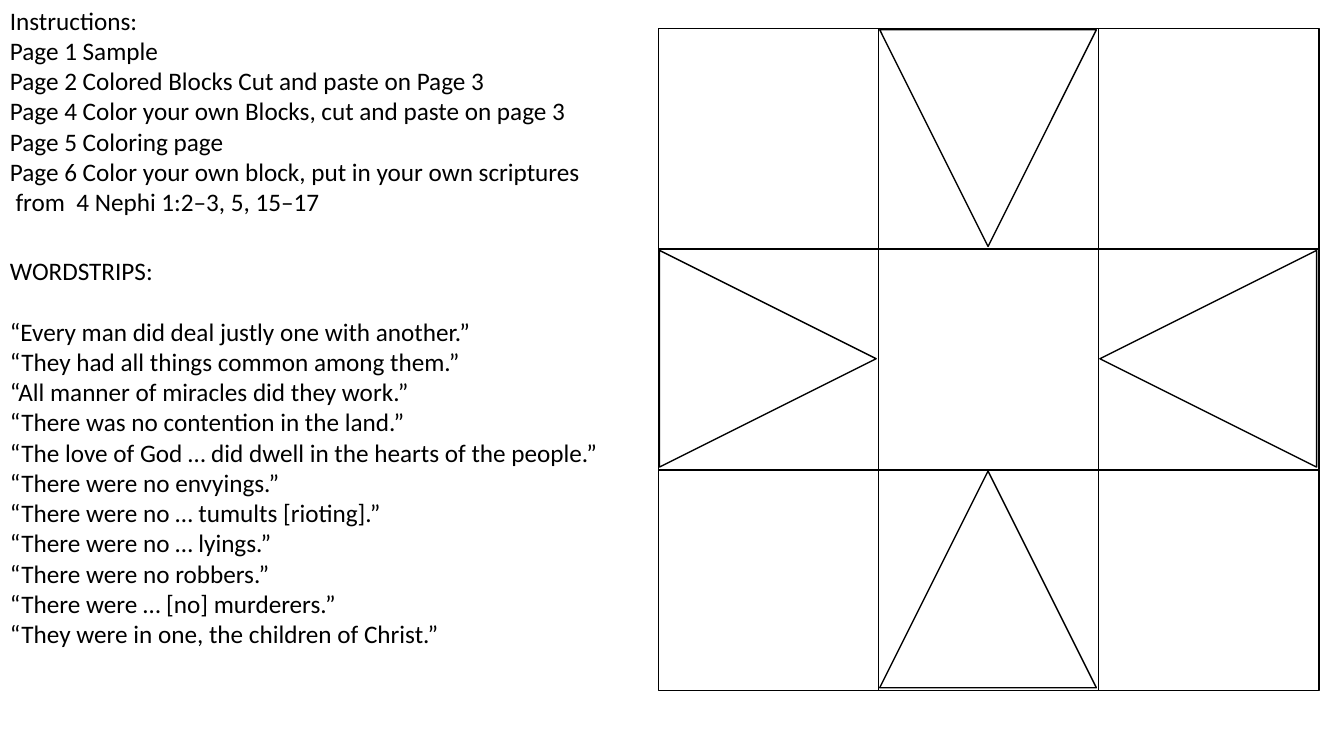
from pptx import Presentation
from pptx import util as u
from pptx.dml.color import RGBColor
from pptx.enum import shapes, text

BLACK = RGBColor(0, 0, 0)
WHITE = RGBColor(255, 255, 255)

INSTRUCTIONS = [
    "Instructions:",
    "Page 1 Sample",
    "Page 2 Colored Blocks Cut and paste on Page 3",
    "Page 4 Color your own Blocks, cut and paste on page 3",
    "Page 5 Coloring page",
    "Page 6 Color your own block, put in your own scriptures",
    " from  4 Nephi 1:2–3, 5, 15–17",
]
WORDSTRIPS = [
    "WORDSTRIPS:",
    "“Every man did deal justly one with another.”",
    "“They had all things common among them.”",
    "“All manner of miracles did they work.”",
    "“There was no contention in the land.”",
    "“The love of God … did dwell in the hearts of the people.”",
    "“There were no envyings.”",
    "“There were no … tumults [rioting].”",
    "“There were no … lyings.”",
    "“There were no robbers.”",
    "“There were … [no] murderers.”",
    "“They were in one, the children of Christ.”",
]

# Quilt block, in centimetres
QUILT_LEFT, QUILT_TOP = 16.59, 0.72
PATCH_W, PATCH_H = 5.55, 5.56
POINT_SIZE, POINT_INSET = 5.46, 0.03
# (row, column) of each star point and its rotation towards the centre
STAR_POINTS = {(2, 1): 0, (0, 1): 180, (1, 0): 90, (1, 2): 270}


class QuiltSlide:
    font = {"name": "Calibri", "size": u.Pt(18)}
    frame = {"word_wrap": True, "auto_size": text.MSO_AUTO_SIZE.SHAPE_TO_FIT_TEXT}

    def __init__(self, prs):
        self.s = prs.slides.add_slide(prs.slide_layouts[6])

    def text_block(self, lines, left, top, width, height, heading_gap=0):
        """Add one paragraph per line, with heading_gap points below the first."""
        box = self.s.shapes.add_textbox(*map(u.Cm, (left, top, width, height)))
        tf = box.text_frame
        for name, value in self.frame.items():
            setattr(tf, name, value)
        for i, line in enumerate(lines):
            p = tf.add_paragraph() if i else tf.paragraphs[0]
            r = p.add_run()
            r.text = line
            for name, value in self.font.items():
                setattr(r.font, name, value)
            r.font.color.rgb = BLACK
        tf.paragraphs[0].space_after = u.Pt(heading_gap)

    def piece(self, group, kind, left, top, width, height, rotation=0):
        """Add one white, black-outlined piece of the quilt."""
        sp = group.shapes.add_shape(kind, *map(u.Cm, (left, top, width, height)))
        sp.rotation = rotation
        sp.shadow.inherit = False
        sp.fill.solid()
        sp.fill.fore_color.rgb = WHITE
        sp.line.color.rgb = BLACK
        sp.line.width = u.Pt(1)

    def quilt(self):
        group = self.s.shapes.add_group_shape()
        corners = {(row, col): (QUILT_LEFT + col * PATCH_W, QUILT_TOP + row * PATCH_H)
                   for row in range(3) for col in range(3)}
        for left, top in corners.values():
            self.piece(group, shapes.MSO_SHAPE.RECTANGLE, left, top, PATCH_W, PATCH_H)
        for cell, rotation in STAR_POINTS.items():
            left, top = corners[cell]
            self.piece(group, shapes.MSO_SHAPE.ISOSCELES_TRIANGLE, left + POINT_INSET,
                       top + POINT_INSET, POINT_SIZE, POINT_SIZE, rotation)


def main():
    prs = Presentation()
    prs.slide_width, prs.slide_height = u.Cm(33.87), u.Cm(19.05)
    slide = QuiltSlide(prs)
    slide.text_block(INSTRUCTIONS, 0, 0, 18.14, 5.64)
    slide.quilt()
    slide.text_block(WORDSTRIPS, 0, 6.3, 16.94, 10.26, heading_gap=22)
    prs.save("out.pptx")


if __name__ == "__main__":
    main()
